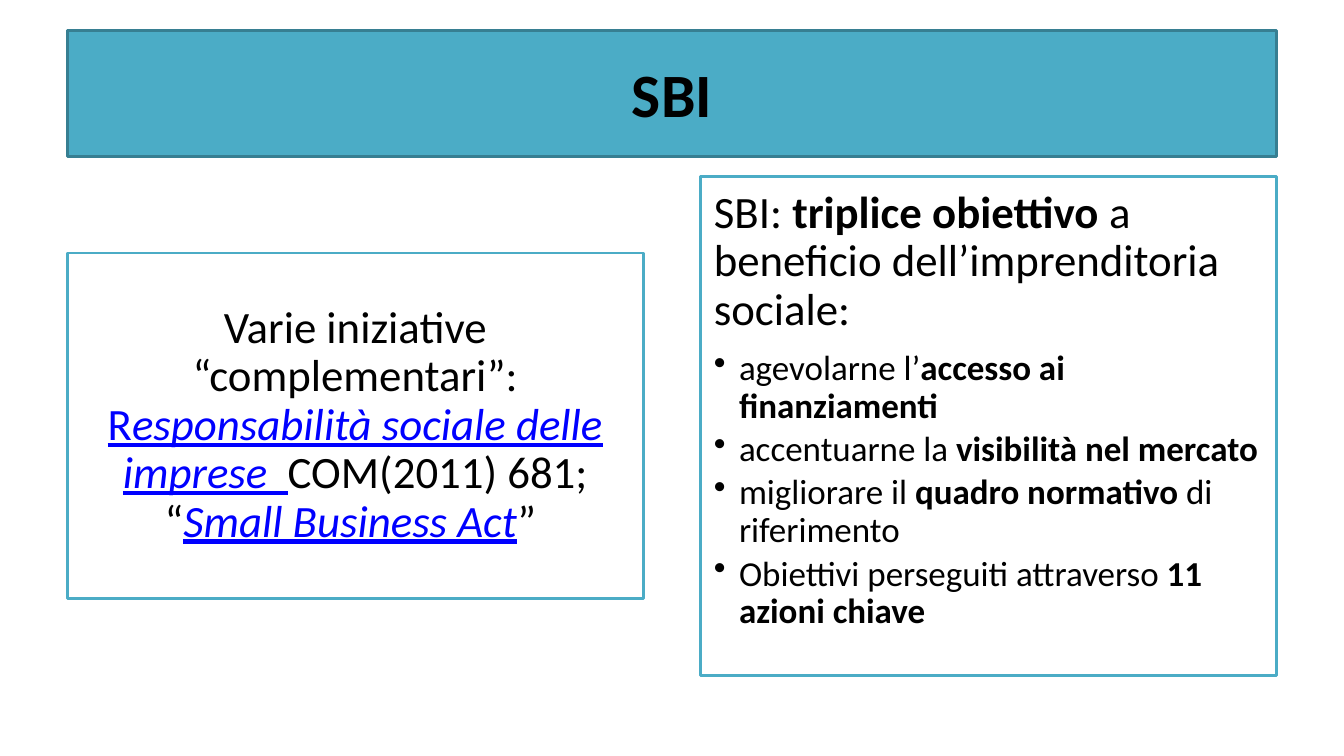
from dataclasses import dataclass

from lxml.etree import SubElement
from pptx import Presentation
from pptx.dml.color import RGBColor as Color
from pptx.enum.shapes import MSO_SHAPE as Preset
from pptx.enum.text import MSO_ANCHOR as Anchor, PP_ALIGN as Align
from pptx.oxml.ns import qn
from pptx.util import Inches, Pt


@dataclass(frozen=True)
class Theme:
    font: str = "Calibri"
    text: str = "000000"
    link: str = "0000FF"
    accent: str = "4BACC6"
    accent_dark: str = "377F92"
    paper: str = "FFFFFF"
    title_size: int = 44
    body_size: int = 32
    bullet_size: int = 25
    line_width: int = 2


theme = Theme()
MARGIN, GUTTER, INSET, INDENT = 0.67, 0.57, 0.13, 0.25
SLIDE_WIDTH, SLIDE_HEIGHT = 13.33, 7.5
CONTENT_WIDTH = SLIDE_WIDTH - 2 * MARGIN
COLUMN_WIDTH = (CONTENT_WIDTH - GUTTER) / 2
RIGHT_COLUMN = MARGIN + COLUMN_WIDTH + GUTTER


def add_box(left, top, width, height, fill, line, anchor):
    shape = slide.shapes.add_shape(
        Preset.RECTANGLE, Inches(left), Inches(top), Inches(width), Inches(height))
    shape.shadow.inherit = False
    shape.fill.solid()
    shape.fill.fore_color.rgb = Color.from_string(fill)
    shape.line.color.rgb = Color.from_string(line)
    shape.line.width = Pt(theme.line_width)
    frame = shape.text_frame
    frame.word_wrap = True
    frame.vertical_anchor = anchor
    frame.margin_left = frame.margin_right = Inches(INSET)
    frame.margin_top = frame.margin_bottom = Inches(INSET)
    return frame


def write(paragraph, runs, size, align, space_after=0, line_spacing=0.9):
    paragraph.alignment = align
    paragraph.line_spacing = line_spacing
    paragraph.space_after = Pt(space_after)
    paragraph.font.name = theme.font
    paragraph.font.size = Pt(size)
    for text, style in runs:
        run = paragraph.add_run()
        run.text = text
        run.font.name = theme.font
        run.font.size = Pt(size)
        run.font.bold = "bold" in style
        run.font.italic = "italic" in style
        run.font.underline = "link" in style
        run.font.color.rgb = Color.from_string(theme.link if "link" in style else theme.text)


presentation = Presentation()
presentation.slide_width = Inches(SLIDE_WIDTH)
presentation.slide_height = Inches(SLIDE_HEIGHT)
slide = presentation.slides.add_slide(presentation.slide_layouts[6])

title = add_box(MARGIN, 0.3, CONTENT_WIDTH, 1.25, theme.accent, theme.accent_dark, Anchor.MIDDLE)
write(title.paragraphs[0], [("SBI", "bold")], theme.title_size, Align.CENTER, line_spacing=1.0)

initiatives = add_box(MARGIN, 2.51, COLUMN_WIDTH, 3.43, theme.paper, theme.accent, Anchor.MIDDLE)
write(initiatives.paragraphs[0], [
    ("Varie iniziative “complementari”: ", ""),
    ("R", "link"),
    ("esponsabilità sociale delle imprese", "link italic"),
    ("  ", "link"),
    ("COM(2011) 681; “", ""),
    ("Small Business Act", "link italic"),
    ("” ", ""),
], theme.body_size, Align.CENTER)

goals = add_box(RIGHT_COLUMN, 1.75, COLUMN_WIDTH, 4.95, theme.paper, theme.accent, Anchor.TOP)
write(goals.paragraphs[0], [
    ("SBI: ", ""),
    ("triplice obiettivo ", "bold"),
    ("a beneficio dell’imprenditoria sociale:", ""),
], theme.body_size, Align.LEFT, space_after=11)

goal_bullets = [
    [("agevolarne l’", ""), ("accesso ai finanziamenti", "bold")],
    [("accentuarne la ", ""), ("visibilità nel mercato", "bold")],
    [("migliorare il ", ""), ("quadro normativo ", "bold"), ("di riferimento", "")],
    [("Obiettivi perseguiti attraverso ", ""), ("11 azioni chiave", "bold")],
]
for runs in goal_bullets:
    paragraph = goals.add_paragraph()
    paragraph.level = 1
    write(paragraph, runs, theme.bullet_size, Align.LEFT, space_after=4)
    properties = paragraph._p.get_or_add_pPr()
    properties.set("marL", str(Inches(INDENT)))
    properties.set("indent", str(-Inches(INDENT)))
    bullet = SubElement(properties, qn("a:buChar"), char="•")
    properties.find(qn("a:defRPr")).addprevious(bullet)

presentation.save("out.pptx")
